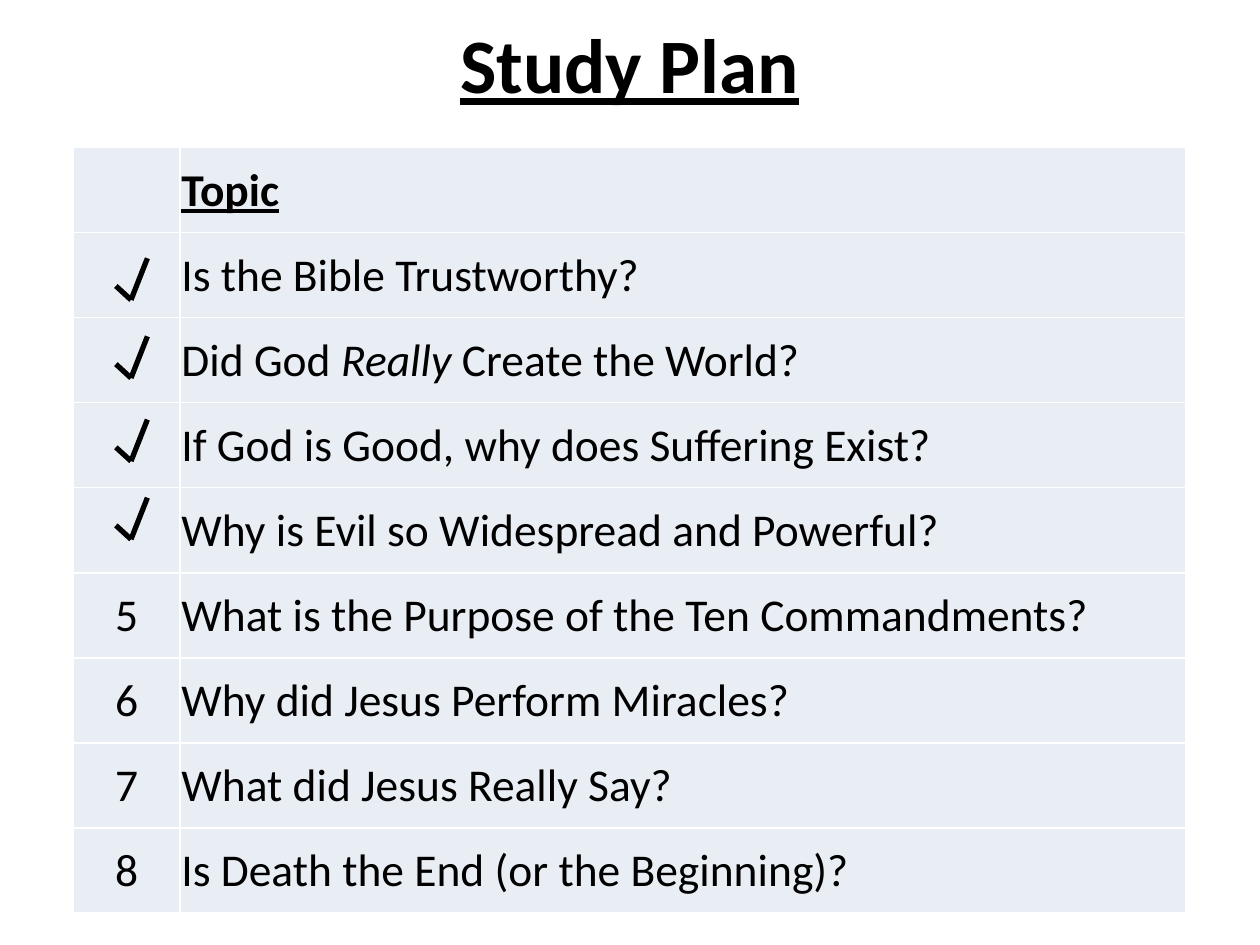
from lxml.etree import SubElement
from pptx import Presentation
from pptx.dml.color import RGBColor
from pptx.enum.shapes import MSO_CONNECTOR
from pptx.enum.text import MSO_ANCHOR, PP_ALIGN
from pptx.oxml.ns import qn
from pptx.util import Inches, Pt


def color(hex_value):
    return RGBColor.from_string(hex_value)


class StudyPlanSlide:
    font_name = "Calibri"
    ink = "000000"
    cell_fill = "E9EDF4"
    border = "FFFFFF"

    def __init__(self, presentation):
        self.slide = presentation.slides.add_slide(presentation.slide_layouts[5])

    def add_run(self, paragraph, text, size, heading=False, italic=False):
        run = paragraph.add_run()
        run.text = text
        font = run.font
        font.name = self.font_name
        font.size = Pt(size)
        font.bold = heading
        font.underline = heading
        font.italic = italic
        font.color.rgb = color(self.ink)

    def add_title(self, text, left, top, width, height):
        title = self.slide.shapes.title
        title.left, title.top = Inches(left), Inches(top)
        title.width, title.height = Inches(width), Inches(height)
        title.text_frame.vertical_anchor = MSO_ANCHOR.MIDDLE
        paragraph = title.text_frame.paragraphs[0]
        paragraph.alignment = PP_ALIGN.CENTER
        self.add_run(paragraph, text, 44, heading=True)

    def add_borders(self, cell):
        properties = cell._tc.get_or_add_tcPr()
        for side in ("a:lnL", "a:lnR", "a:lnT", "a:lnB"):
            line = SubElement(properties, qn(side), w=str(Pt(1)))
            fill = SubElement(line, qn("a:solidFill"))
            SubElement(fill, qn("a:srgbClr"), val=self.border)

    def format_cell(self, cell, runs, alignment, heading):
        self.add_borders(cell)
        cell.fill.solid()
        cell.fill.fore_color.rgb = color(self.cell_fill)
        cell.vertical_anchor = MSO_ANCHOR.MIDDLE
        cell.margin_left = cell.margin_right = cell.margin_top = Inches(0.01)
        cell.margin_bottom = 0
        paragraph = cell.text_frame.paragraphs[0]
        paragraph.alignment = alignment
        for text, italic in runs:
            self.add_run(paragraph, text, 26, heading, italic)

    def add_table(self, rows, left, top, column_widths, height):
        frame = self.slide.shapes.add_table(
            len(rows), len(column_widths), Inches(left), Inches(top),
            Inches(sum(column_widths)), Inches(height))
        table = frame.table
        table.first_row = False
        table.horz_banding = False
        for column, width in zip(table.columns, column_widths):
            column.width = Inches(width)
        for index, (number, topic) in enumerate(rows):
            number_runs = [(number, False)] if number else []
            heading = index == 0
            self.format_cell(table.cell(index, 0), number_runs, PP_ALIGN.CENTER, heading)
            self.format_cell(table.cell(index, 1), topic, PP_ALIGN.LEFT, heading)

    def add_line(self, shapes, start, end):
        line = shapes.add_connector(
            MSO_CONNECTOR.STRAIGHT, *(Inches(value) for value in start + end))
        line.line.color.rgb = color(self.ink)
        line.line.width = Pt(3)
        SubElement(line._element.spPr, qn("a:effectLst"))

    def add_check_mark(self, left, top):
        shapes = self.slide.shapes.add_group_shape().shapes
        corner = (left + 0.12, top + 0.33)
        self.add_line(shapes, (left, top + 0.22), corner)
        self.add_line(shapes, corner, (left + 0.25, top))


def main():
    presentation = Presentation()
    presentation.slide_width = Inches(10)
    presentation.slide_height = Inches(7.5)

    rows = [
        ("", [("Topic", False)]),
        ("", [("Is the Bible Trustworthy?", False)]),
        ("", [("Did God ", False), ("Really ", True), ("Create the World?", False)]),
        ("", [("If God is Good, why does Suffering Exist?", False)]),
        ("", [("Why is Evil so Widespread and Powerful?", False)]),
        ("5", [("What is the Purpose of the Ten Commandments?", False)]),
        ("6", [("Why did Jesus Perform Miracles?", False)]),
        ("7", [("What did Jesus Really Say?", False)]),
        ("8", [("Is Death the End (or the Beginning)?", False)]),
    ]
    plan = StudyPlanSlide(presentation)
    plan.add_title("Study Plan", 2.75, 0, 4.5, 1)
    plan.add_table(rows, 0.58, 1.17, (0.85, 7.98), 6.08)
    for top in (2.67, 2.05, 3.95, 3.33):
        plan.add_check_mark(0.92, top)

    presentation.save("out.pptx")


if __name__ == "__main__":
    main()
